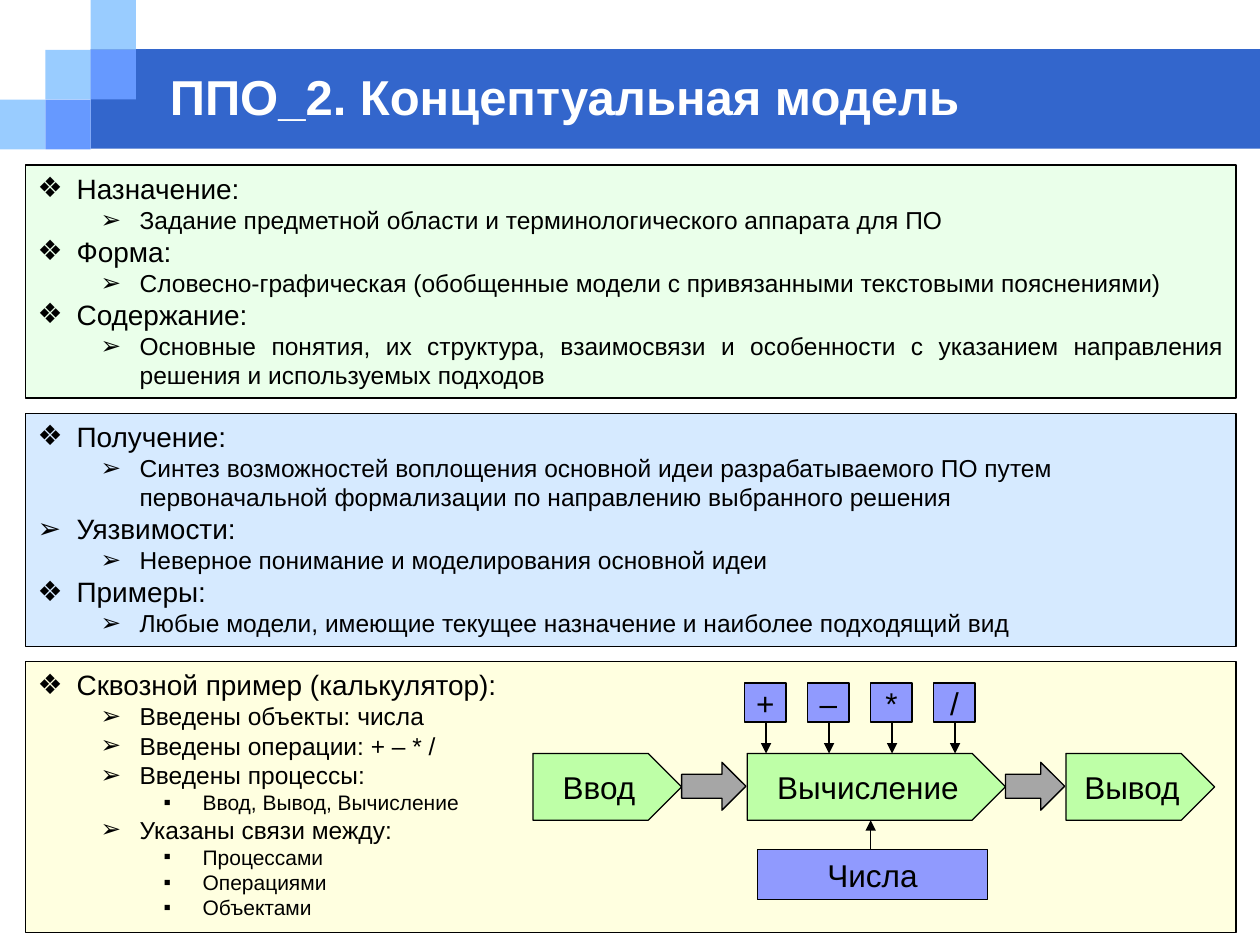
from dataclasses import dataclass

import lxml.etree
import pptx
import pptx.dml.color
import pptx.enum.shapes
import pptx.enum.text
import pptx.oxml
import pptx.oxml.ns
import pptx.util

Inches = pptx.util.Inches
Shape = pptx.enum.shapes.MSO_SHAPE
Align = pptx.enum.text.PP_ALIGN
Anchor = pptx.enum.text.MSO_ANCHOR
qn = pptx.oxml.ns.qn


@dataclass(frozen=True)
class Theme:
    font: str = "Arial"
    ink: str = "000000"
    white: str = "FFFFFF"
    band: str = "3366CC"
    light_square: str = "99CCFF"
    dark_square: str = "6699FF"
    green_panel: str = "99FF99"
    blue_panel: str = "3399FF"
    yellow_panel: str = "FFFF66"
    process: str = "BEFFA7"
    operand: str = "909AFE"
    flow: str = "A6A6A6"
    title_size: int = 28
    diagram_size: int = 18
    level_sizes: tuple = (16, 14, 12)
    outline: float = 0.75


theme = Theme()
rgb = pptx.dml.color.RGBColor.from_string

deck = pptx.Presentation()
deck.slide_width, deck.slide_height = Inches(10), Inches(7.5)
page = deck.slides.add_slide(deck.slide_layouts[6])


def add_box(kind, left, top, width, height, fill, outlined=True, label=None):
    box = page.shapes.add_shape(kind, Inches(left), Inches(top), Inches(width), Inches(height))
    box.shadow.inherit = False
    box.fill.solid()
    box.fill.fore_color.rgb = rgb(fill)
    if outlined:
        box.line.color.rgb = rgb(theme.ink)
        box.line.width = pptx.util.Pt(theme.outline)
    else:
        box.line.fill.background()
    if label:
        box.text_frame.vertical_anchor = Anchor.MIDDLE
        box.text_frame.word_wrap = False
        para = box.text_frame.paragraphs[0]
        para.text = label
        para.alignment = Align.CENTER
        set_font(para, theme.diagram_size, theme.ink)
    return box


def set_font(para, size, color, bold=False):
    para.font.name = theme.font
    para.font.size = pptx.util.Pt(size)
    para.font.color.rgb = rgb(color)
    para.font.bold = bold


# Header band, stepped squares and title
add_box(Shape.RECTANGLE, 0.72, 0.39, 9.28, 0.79, theme.band, outlined=False)
step_x, step_y = 0.36, 0.395
for column, row, color in (
    (0, 2, theme.light_square),
    (1, 1, theme.light_square),
    (2, 0, theme.light_square),
    (2, 1, theme.dark_square),
    (1, 2, theme.dark_square),
):
    add_box(Shape.RECTANGLE, column * step_x, row * step_y, step_x, step_y, color, outlined=False)

title = page.shapes.add_textbox(Inches(1.25), Inches(0.5), Inches(8.08), Inches(0.53))
title.text_frame.word_wrap = True
title.text_frame.vertical_anchor = Anchor.MIDDLE
title_para = title.text_frame.paragraphs[0]
title_para.text = "ППО_2. Концептуальная модель"
set_font(title_para, theme.title_size, theme.white, bold=True)

# Text panels: each line is level, bullet, alignment, text
DIAMOND, ARROW, SQUARE = "❖", "➢", "▪"
LEFT, JUSTIFY = Align.LEFT, Align.JUSTIFY
panels = (
    (1.31, 1.85, theme.green_panel, (
        (0, DIAMOND, JUSTIFY, "Назначение:"),
        (1, ARROW, LEFT, "Задание предметной области и терминологического аппарата для ПО"),
        (0, DIAMOND, JUSTIFY, "Форма:"),
        (1, ARROW, LEFT, "Словесно-графическая (обобщенные модели с привязанными "
                         "текстовыми пояснениями)"),
        (0, DIAMOND, JUSTIFY, "Содержание:"),
        (1, ARROW, JUSTIFY, "Основные понятия, их структура, взаимосвязи и особенности "
                            "с указанием направления решения и используемых подходов"),
    )),
    (3.28, 1.85, theme.blue_panel, (
        (0, DIAMOND, JUSTIFY, "Получение:"),
        (1, ARROW, LEFT, "Синтез возможностей воплощения основной идеи разрабатываемого ПО "
                         "путем первоначальной формализации по направлению выбранного решения"),
        (0, ARROW, LEFT, "Уязвимости:"),
        (1, ARROW, LEFT, "Неверное понимание и моделирования основной идеи"),
        (0, DIAMOND, JUSTIFY, "Примеры:"),
        (1, ARROW, LEFT, "Любые модели, имеющие текущее назначение и наиболее подходящий вид"),
    )),
    (5.25, 2.15, theme.yellow_panel, (
        (0, DIAMOND, JUSTIFY, "Сквозной пример (калькулятор):"),
        (1, ARROW, JUSTIFY, "Введены объекты: числа"),
        (1, ARROW, JUSTIFY, "Введены операции: + – * /"),
        (1, ARROW, JUSTIFY, "Введены процессы:"),
        (2, SQUARE, JUSTIFY, "Ввод, Вывод, Вычисление"),
        (1, ARROW, JUSTIFY, "Указаны связи между:"),
        (2, SQUARE, JUSTIFY, "Процессами"),
        (2, SQUARE, JUSTIFY, "Операциями"),
        (2, SQUARE, JUSTIFY, "Объектами"),
    )),
)
hanging = 0.31
for top, height, color, lines in panels:
    panel = add_box(Shape.RECTANGLE, 0.2, top, 9.61, height, color)
    fill_color = panel.fill._xPr.find(qn("a:solidFill"))[0]
    lxml.etree.SubElement(fill_color, qn("a:alpha"), val="20000")
    frame = panel.text_frame
    frame.word_wrap = True
    frame.vertical_anchor = Anchor.TOP
    for index, (level, bullet, alignment, text) in enumerate(lines):
        para = frame.add_paragraph() if index else frame.paragraphs[0]
        para.text = text
        para.level = level
        para.alignment = alignment
        properties = para._p.get_or_add_pPr()
        properties.set("marL", str(Inches(hanging + 0.5 * level)))
        properties.set("indent", str(-Inches(hanging)))
        lxml.etree.SubElement(properties, qn("a:buFont"), typeface=theme.font)
        lxml.etree.SubElement(properties, qn("a:buChar"), char=bullet)
        set_font(para, theme.level_sizes[level], theme.ink)

# Calculator diagram
process_top, process_height = 5.98, 0.53
for left, width, label in ((4.23, 1.18, "Ввод"), (5.93, 2.05, "Вычисление"), (8.46, 1.18, "Вывод")):
    add_box(Shape.PENTAGON, left, process_top, width, process_height, theme.process, label=label)
for left, width in ((5.41, 0.51), (7.98, 0.47)):
    add_box(Shape.RIGHT_ARROW, left, 6.05, width, 0.38, theme.flow)
add_box(Shape.RECTANGLE, 6.01, 6.74, 1.83, 0.4, theme.operand, label="Числа")

links = [(6.91, 6.74, process_top + process_height)]
for index, operation in enumerate("+–*/"):
    left = 5.91 + 0.5 * index
    add_box(Shape.RECTANGLE, left, 5.42, 0.33, 0.31, theme.operand, label=operation)
    links.append((left + 0.17, 5.73, process_top))

for x, start, end in links:
    link = page.shapes.add_connector(
        pptx.enum.shapes.MSO_CONNECTOR.STRAIGHT, Inches(x), Inches(start), Inches(x), Inches(end))
    link.line.color.rgb = rgb(theme.ink)
    link.line.width = pptx.util.Pt(theme.outline)
    lxml.etree.SubElement(link.line._get_or_add_ln(), qn("a:tailEnd"), type="triangle")
    lxml.etree.SubElement(link._element.spPr, qn("a:effectLst"))

deck.save("out.pptx")
